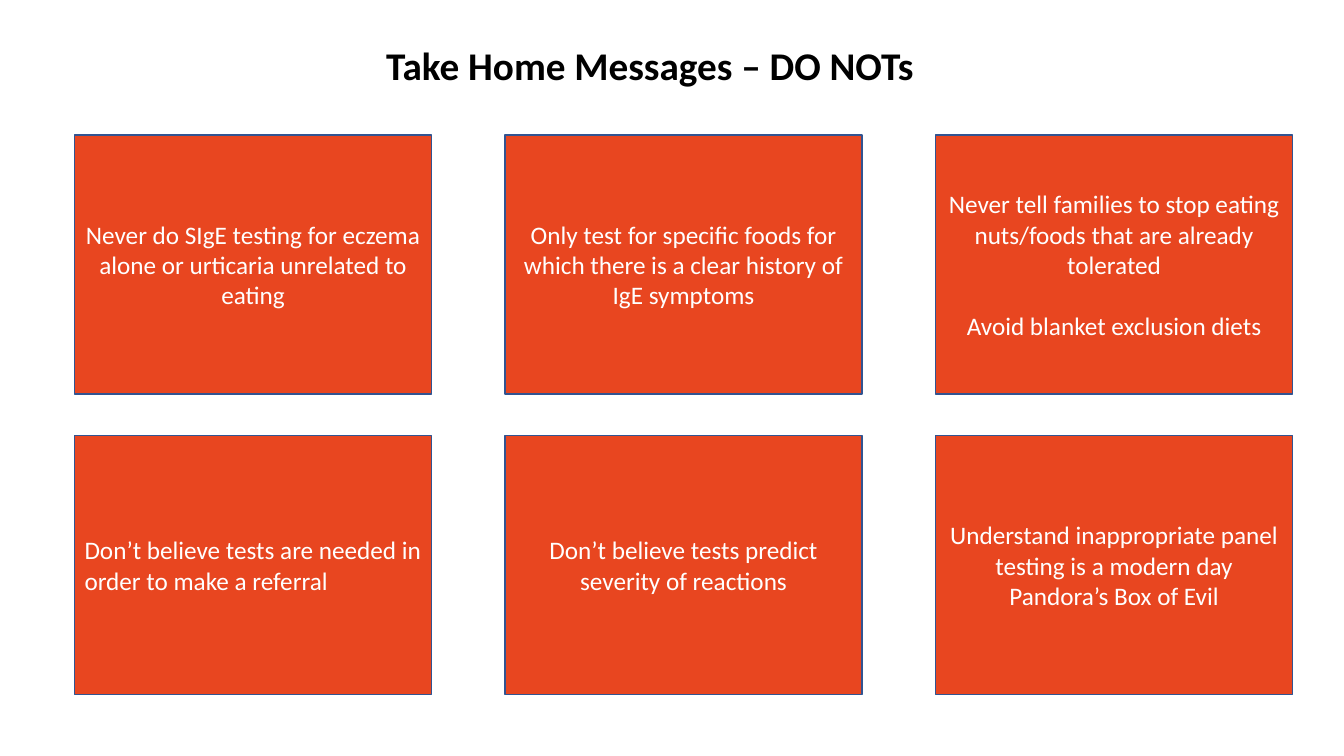
from pptx import Presentation
from pptx import util as u
from pptx.dml.color import RGBColor
from pptx.enum import shapes, text

ORANGE = RGBColor(0xE8, 0x46, 0x20)
BLUE = RGBColor(0x32, 0x54, 0x91)
WHITE = RGBColor(0xFF, 0xFF, 0xFF)
BLACK = RGBColor(0, 0, 0)

MID, LEFT = text.PP_ALIGN.CENTER, text.PP_ALIGN.LEFT

CARDS = [
    (["Never do SIgE testing for eczema alone or urticaria unrelated to eating"], MID),
    (["Only test for specific foods for which there is a clear history of IgE symptoms"], MID),
    (["Never tell families to stop eating nuts/foods that are already tolerated",
      "Avoid blanket exclusion diets"], MID),
    (["Don’t believe tests are needed in order to make a referral"], LEFT),
    (["Don’t believe tests predict severity of reactions"], MID),
    (["Understand inappropriate panel testing is a modern day Pandora’s Box of Evil"], MID),
]


class Board:
    """Holds the text styles and the current slide."""

    head = {"name": "Calibri", "size": u.Pt(28), "bold": True}
    body = {"name": "Calibri", "size": u.Pt(18)}
    gap = u.Pt(22)

    def __init__(self, slide):
        self.slide = slide

    def fill_text(self, frame, lines, style, color, align):
        frame.word_wrap = True
        for i, line in enumerate(lines):
            para = frame.paragraphs[0] if i == 0 else frame.add_paragraph()
            para.alignment = align
            if i:
                para.space_before = self.gap
            run = para.add_run()
            run.text = line
            for key, value in style.items():
                setattr(run.font, key, value)
            run.font.color.rgb = color

    def title(self, line, *box):
        frame = self.slide.shapes.add_textbox(*map(u.Inches, box)).text_frame
        frame.auto_size = text.MSO_AUTO_SIZE.SHAPE_TO_FIT_TEXT
        self.fill_text(frame, [line], self.head, BLACK, MID)

    def card(self, lines, align, *box):
        card = self.slide.shapes.add_shape(
            shapes.MSO_SHAPE.RECTANGLE, *map(u.Inches, box))
        card.shadow.inherit = False
        card.fill.solid()
        card.fill.fore_color.rgb = ORANGE
        card.line.color.rgb = BLUE
        card.line.width = u.Pt(1)
        card.text_frame.vertical_anchor = text.MSO_ANCHOR.MIDDLE
        self.fill_text(card.text_frame, lines, self.body, WHITE, align)


def main():
    deck = Presentation()
    deck.slide_width, deck.slide_height = u.Inches(13.33), u.Inches(7.5)
    board = Board(deck.slides.add_slide(deck.slide_layouts[6]))

    # Grid of messages, three to a row
    for i, (lines, align) in enumerate(CARDS):
        row, col = divmod(i, 3)
        board.card(lines, align, 0.74 + 4.27 * col, 1.34 + 2.98 * row, 3.54, 2.57)

    # Heading
    board.title("Take Home Messages – DO NOTs", 3.11, 0.36, 6.67, 0.57)

    deck.save("out.pptx")


if __name__ == "__main__":
    main()
